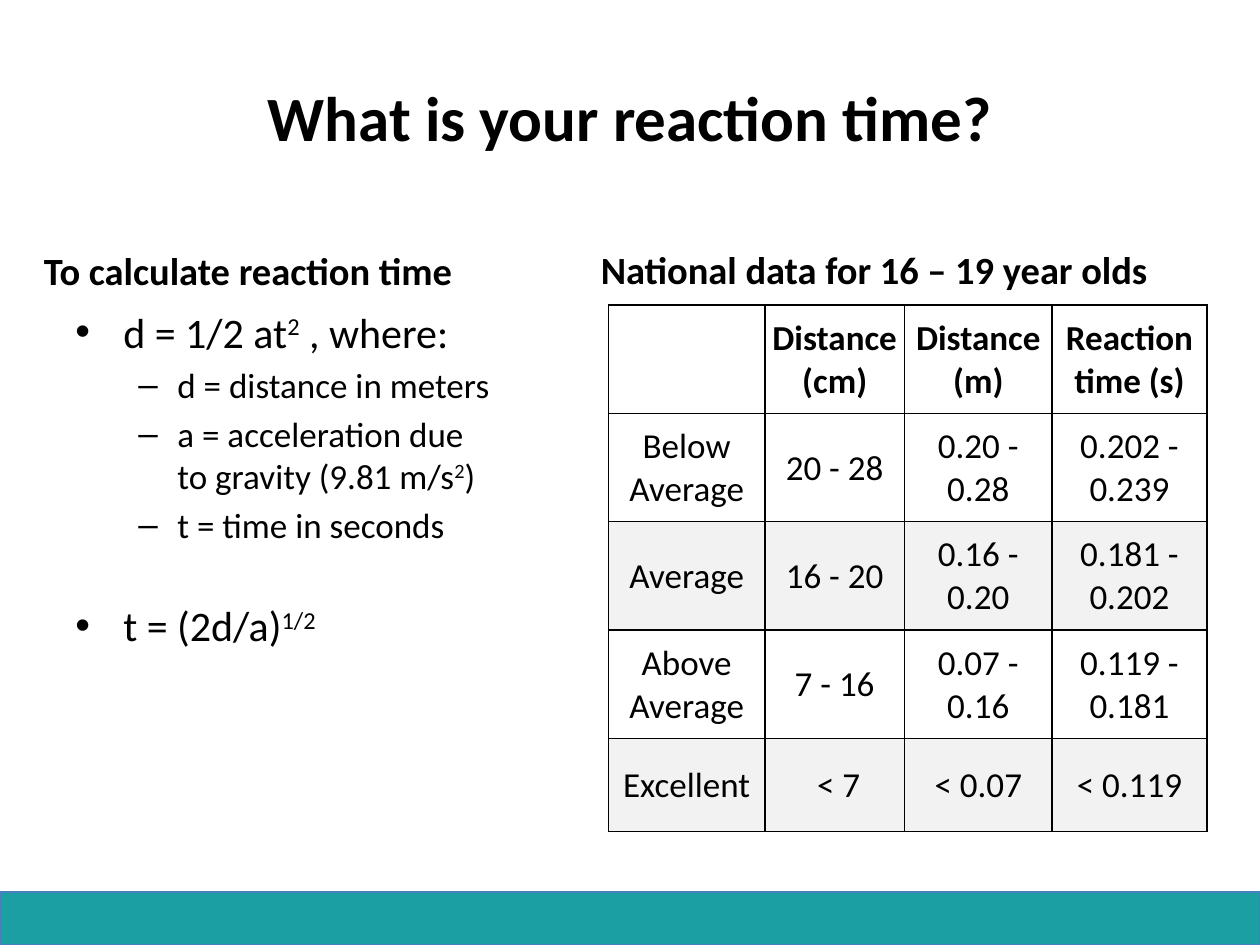
from lxml import etree
from pptx import Presentation
from pptx.dml.color import RGBColor
from pptx.enum.shapes import MSO_SHAPE
from pptx.enum.text import MSO_ANCHOR, PP_ALIGN
from pptx.oxml.ns import qn
from pptx.util import Inches, Pt

RECT = MSO_SHAPE.RECTANGLE
TOP, MIDDLE, BOTTOM = MSO_ANCHOR.TOP, MSO_ANCHOR.MIDDLE, MSO_ANCHOR.BOTTOM
LEFT, CENTER = PP_ALIGN.LEFT, PP_ALIGN.CENTER
BLACK = RGBColor(0, 0, 0)
TEAL = RGBColor(0x1C, 0x9F, 0xA3)
BLUE = RGBColor(0x4B, 0x7E, 0xBC)
GRAY = RGBColor(0xF2, 0xF2, 0xF2)
FONT = "Calibri"

# text, box, size, alignment, anchor
HEADS = [
    ("What is your reaction time?", (0.5, 0.3, 9, 1.25), 36, CENTER, MIDDLE),
    ("To calculate reaction time", (0.25, 1.68, 4.42, 0.7), 22, LEFT, BOTTOM),
    ("National data for 16 – 19 year olds", (4.67, 1.67, 5.17, 0.7), 22,
     LEFT, BOTTOM),
]

# level, space before, parts (every second part is raised)
STEPS = [
    (0, 5, ["d = 1/2 at", "2", " , where:"]),
    (1, 4, ["d = distance in meters"]),
    (1, 4, ["a = acceleration due \vto gravity (9.81 m/s", "2", ")"]),
    (1, 4, ["t = time in seconds"]),
    (0, 31, ["t = (2d/a)", "1/2"]),
]
# bullet, size, left margin, hanging indent for each level
LEVELS = [("•", 24, 0.38, 0.38), ("–", 20, 0.81, 0.31)]

ROWS = [
    ("", "Distance (cm)", "Distance (m)", "Reaction time (s)"),
    ("Below Average", "20 - 28", "0.20 - 0.28", "0.202 - 0.239"),
    ("Average", "16 - 20", "0.16 - 0.20", "0.181 - 0.202"),
    ("Above Average", "7 - 16", "0.07 - 0.16", "0.119 - 0.181"),
    ("Excellent", " < 7", "< 0.07", "< 0.119"),
]
WIDTHS = [1.24, 1.11, 1.17, 1.23]
HEIGHTS = [0.86] * 4 + [0.74]


def style(par, size, bold=False):
    for run in par.runs:
        font = run.font
        font.name, font.size, font.bold = FONT, Pt(size), bold
        font.color.rgb = BLACK


def add_box(slide, box, anchor):
    frame = slide.shapes.add_textbox(*map(Inches, box)).text_frame
    frame.word_wrap = True
    frame.vertical_anchor = anchor
    return frame


def add_bar(slide):
    bar = slide.shapes.add_shape(RECT, 0, Inches(7.08), Inches(10), Inches(0.42))
    bar.shadow.inherit = False
    bar.fill.solid()
    bar.fill.fore_color.rgb = TEAL
    bar.line.color.rgb = BLUE
    bar.line.width = Pt(0.75)


def add_head(slide, text, box, size, align, anchor):
    par = add_box(slide, box, anchor).paragraphs[0]
    par.text = text
    par.alignment = align
    style(par, size, True)


def add_steps(slide):
    frame = add_box(slide, (0.5, 2.38, 4.42, 4.32), TOP)
    for i, (level, space, parts) in enumerate(STEPS):
        par = frame.add_paragraph() if i else frame.paragraphs[0]
        mark, size, left, hang = LEVELS[level]
        par.text = parts[0]
        for j, part in enumerate(parts[1:], 1):
            run = par.add_run()
            run.text = part
            if j % 2:
                run.font._element.set("baseline", "30000")
        par.level = level
        par.space_before = Pt(space)
        style(par, size)
        props = par._p.get_or_add_pPr()
        props.set("marL", str(Inches(left)))
        props.set("indent", str(-Inches(hang)))
        etree.SubElement(props, qn("a:buFont"), typeface="Arial")
        etree.SubElement(props, qn("a:buChar"), char=mark)


def add_borders(cell):
    props = cell._tc.get_or_add_tcPr()
    for i, side in enumerate(("lnL", "lnR", "lnT", "lnB")):
        line = etree.Element(qn(f"a:{side}"), w=str(Pt(1)))
        fill = etree.SubElement(line, qn("a:solidFill"))
        etree.SubElement(fill, qn("a:srgbClr"), val=str(BLACK))
        props.insert(i, line)


def add_data(slide):
    table = slide.shapes.add_table(
        len(ROWS), len(WIDTHS), Inches(4.83), Inches(2.42),
        Inches(sum(WIDTHS)), Inches(sum(HEIGHTS))).table
    for col, width in zip(table.columns, WIDTHS):
        col.width = Inches(width)
    for r, (row, height) in enumerate(zip(ROWS, HEIGHTS)):
        table.rows[r].height = Inches(height)
        for c, text in enumerate(row):
            cell = table.cell(r, c)
            cell.margin_left = cell.margin_right = Inches(0.01)
            cell.margin_top, cell.margin_bottom = Inches(0.01), 0
            cell.vertical_anchor = MIDDLE
            if r and r % 2 == 0:
                cell.fill.solid()
                cell.fill.fore_color.rgb = GRAY
            else:
                cell.fill.background()
            add_borders(cell)
            par = cell.text_frame.paragraphs[0]
            par.text = text
            par.alignment = CENTER
            style(par, 20, r == 0)


def main():
    prs = Presentation()
    prs.slide_width, prs.slide_height = Inches(10), Inches(7.5)
    slide = prs.slides.add_slide(prs.slide_layouts[6])
    add_bar(slide)
    for head in HEADS:
        add_head(slide, *head)
    add_steps(slide)
    add_data(slide)
    prs.save("out.pptx")


if __name__ == "__main__":
    main()
